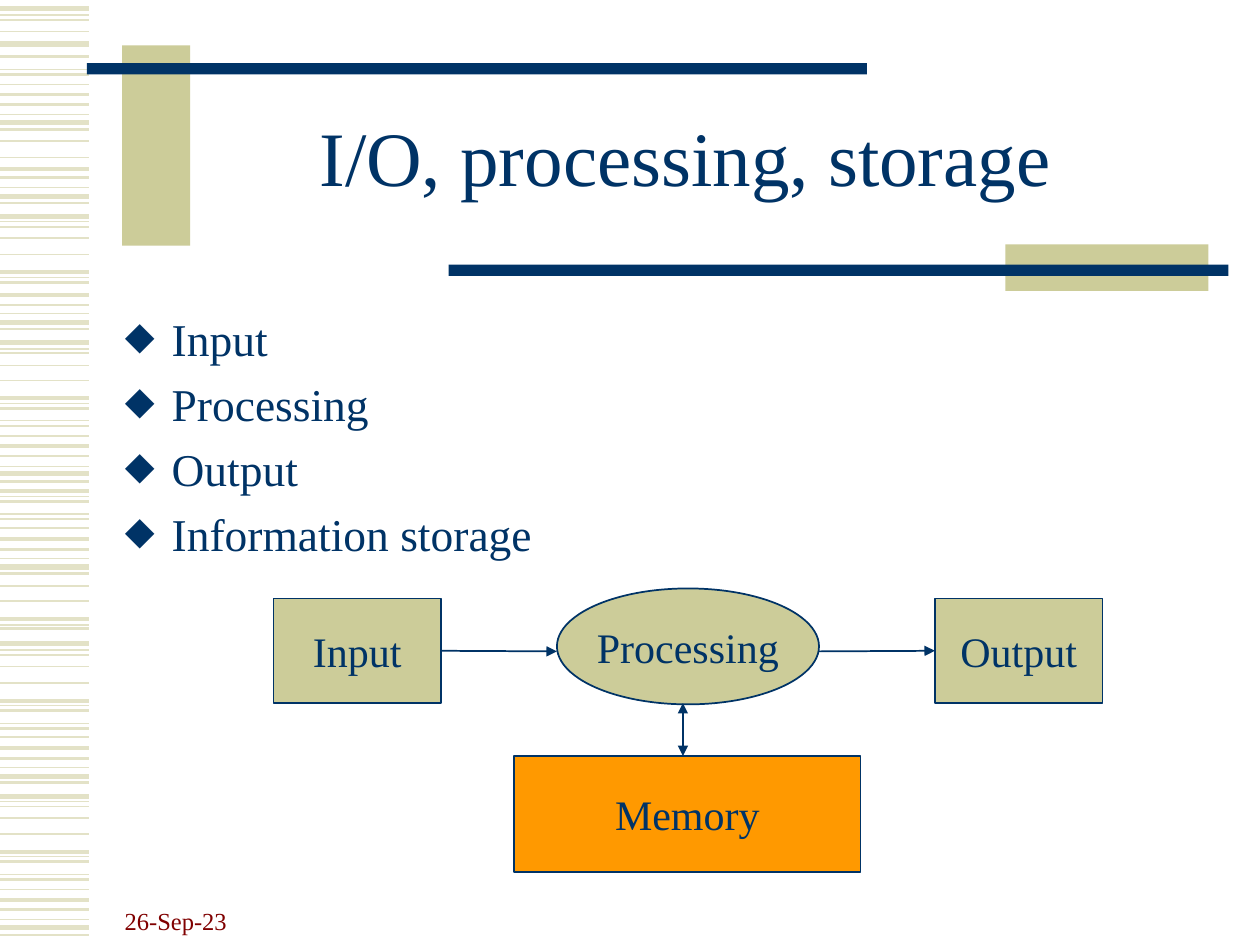
from lxml import etree
from pptx import Presentation
from pptx.dml.color import RGBColor
from pptx.enum.shapes import MSO_CONNECTOR, MSO_SHAPE
from pptx.enum.text import MSO_ANCHOR, MSO_AUTO_SIZE, PP_ALIGN
from pptx.oxml.ns import qn
from pptx.util import Cm, Pt

STRAIGHT = MSO_CONNECTOR.STRAIGHT
RECTANGLE, OVAL = MSO_SHAPE.RECTANGLE, MSO_SHAPE.OVAL
MIDDLE, BOTTOM = MSO_ANCHOR.MIDDLE, MSO_ANCHOR.BOTTOM
CENTER, LEFT = PP_ALIGN.CENTER, PP_ALIGN.LEFT
FIXED = MSO_AUTO_SIZE.NONE
INCH = 2.54  # centimetres
NAVY, SAND, PALE_SAND = "003366", "CCCC99", "E3E2C7"
ORANGE, MAROON = "FF9900", "800000"
FONT = "Times New Roman"


def write(para, text, size, color=NAVY, align=LEFT):
    para.alignment = align
    span = para.add_run()
    span.text = text
    span.font.name = FONT
    span.font.size = Pt(size)
    span.font.color.rgb = RGBColor.from_string(color)


def draw_line(start, end, color, width, arrows=()):
    x1, y1, x2, y2 = [Cm(value * INCH) for value in (*start, *end)]
    line = slide.shapes.add_connector(STRAIGHT, x1, y1, x2, y2)
    line.line.color.rgb = RGBColor.from_string(color)
    line.line.width = Pt(width)
    for arrow in arrows:
        etree.SubElement(line.line._get_or_add_ln(), qn(f"a:{arrow}"), type="triangle")
    etree.SubElement(line._element.spPr, qn("a:effectLst"))
    return line


deck = Presentation()
deck.slide_width, deck.slide_height = Cm(10 * INCH), Cm(7.5 * INCH)
slide = deck.slides.add_slide(deck.slide_layouts[5])

# Striped left edge: line width in points, then heights in inches
stripes = {
    0.75: [0.12, 0.55, 0.91, 1.49, 1.76, 2.2, 2.49, 2.77, 3.2, 3.34, 3.7, 3.94, 4.08,
           4.43, 4.96, 5.16, 5.6, 5.74, 6.09, 6.36, 6.8, 6.94, 7.3],
    1: [0.16, 0.25, 0.67, 1.12, 1.25, 1.8, 1.89, 2.02, 2.8, 2.9, 3.02, 3.46, 4.19,
        4.65, 4.77, 5.2, 5.29, 5.42, 5.85, 6.4, 6.49, 6.62, 7.06],
    1.5: [0.45, 0.59, 0.83, 1.03, 1.41, 1.61, 2.24, 2.42, 2.61, 3.24, 3.38, 3.62, 3.82,
          3.98, 4.12, 4.36, 4.55, 4.99, 5.64, 5.78, 6.02, 6.21, 6.84, 6.98, 7.22, 7.42],
    2.25: [0.75, 1.34, 2.16, 2.34, 3.16, 3.54, 3.9, 4.28, 4.91, 5.56, 5.94, 6.76, 7.14],
    3: [0.07, 0.35, 0.97, 1.56, 1.72, 2.56, 2.72, 3.76, 4.5, 5.11, 6.16, 6.32, 7.36],
}
for width, heights in stripes.items():
    for y in heights:
        draw_line((0, y), (0.71, y), PALE_SAND, width)

# Bars around the title
bars = [
    (0.97, 0.36, 0.54, 1.59, SAND),
    (0.69, 0.5, 6.19, 0.09, NAVY),
    (7.98, 1.94, 1.61, 0.37, SAND),
    (3.56, 2.1, 6.19, 0.09, NAVY),
]
for *place, color in bars:
    bar = slide.shapes.add_shape(RECTANGLE, *[Cm(value * INCH) for value in place])
    bar.shadow.inherit = False
    bar.fill.solid()
    bar.fill.fore_color.rgb = RGBColor.from_string(color)
    bar.line.fill.background()

# Title
title = slide.shapes.title
title.left, title.top = Cm(1.5 * INCH), Cm(0.67 * INCH)
title.width, title.height = Cm(8.07 * INCH), Cm(1.25 * INCH)
title.text_frame.auto_size = FIXED
title.text_frame.vertical_anchor = MIDDLE
para = title.text_frame.paragraphs[0]
para.line_spacing = 0.85
write(para, "I/O, processing, storage\t", 44, align=CENTER)

# Date
date_box = slide.shapes.add_textbox(*[Cm(v * INCH) for v in (0.89, 6.97, 2.08, 0.5)])
date_box.text_frame.word_wrap = True
date_box.text_frame.vertical_anchor = BOTTOM
write(date_box.text_frame.paragraphs[0], "26-Sep-23", 14, MAROON)

# Bullet list
body = slide.shapes.add_textbox(*[Cm(v * INCH) for v in (0.89, 2.42, 8.7, 4.24)])
body.text_frame.word_wrap = True
for index, item in enumerate(["Input", "Processing", "Output", "Information storage"]):
    para = body.text_frame.add_paragraph() if index else body.text_frame.paragraphs[0]
    write(para, item, 26)
    para.space_before = Pt(6)
    props = para._p.get_or_add_pPr()
    indent = Cm(0.95)
    props.set("marL", str(indent))
    props.set("indent", str(-indent))
    bullet_color = etree.SubElement(props, qn("a:buClr"))
    etree.SubElement(bullet_color, qn("a:srgbClr"), val=NAVY)
    etree.SubElement(props, qn("a:buFont"), typeface=FONT)
    etree.SubElement(props, qn("a:buChar"), char="⬥")

# Flow diagram boxes
nodes = [
    ("Input", RECTANGLE, SAND, 2.17, 4.75, 1.33, 0.83),
    ("Processing", OVAL, SAND, 4.42, 4.67, 2.08, 0.92),
    ("Output", RECTANGLE, SAND, 7.42, 4.75, 1.33, 0.83),
    ("Memory", RECTANGLE, ORANGE, 4.08, 6, 2.75, 0.92),
]
boxes = {}
for name, kind, color, *place in nodes:
    box = slide.shapes.add_shape(kind, *[Cm(value * INCH) for value in place])
    box.shadow.inherit = False
    box.fill.solid()
    box.fill.fore_color.rgb = RGBColor.from_string(color)
    box.line.color.rgb = RGBColor.from_string(NAVY)
    box.line.width = Pt(1)
    box.text_frame.word_wrap = False
    box.text_frame.vertical_anchor = MIDDLE
    write(box.text_frame.paragraphs[0], name, 24, align=CENTER)
    boxes[name] = box

# Flow diagram arrows
from_input = draw_line((3.5, 5.17), (4.42, 5.17), NAVY, 1, ["tailEnd"])
from_input.begin_connect(boxes["Input"], 3)
to_output = draw_line((6.5, 5.17), (7.42, 5.17), NAVY, 1, ["tailEnd"])
to_output.end_connect(boxes["Output"], 1)
draw_line((5.42, 5.58), (5.42, 6), NAVY, 1, ["headEnd", "tailEnd"])

deck.save("out.pptx")
